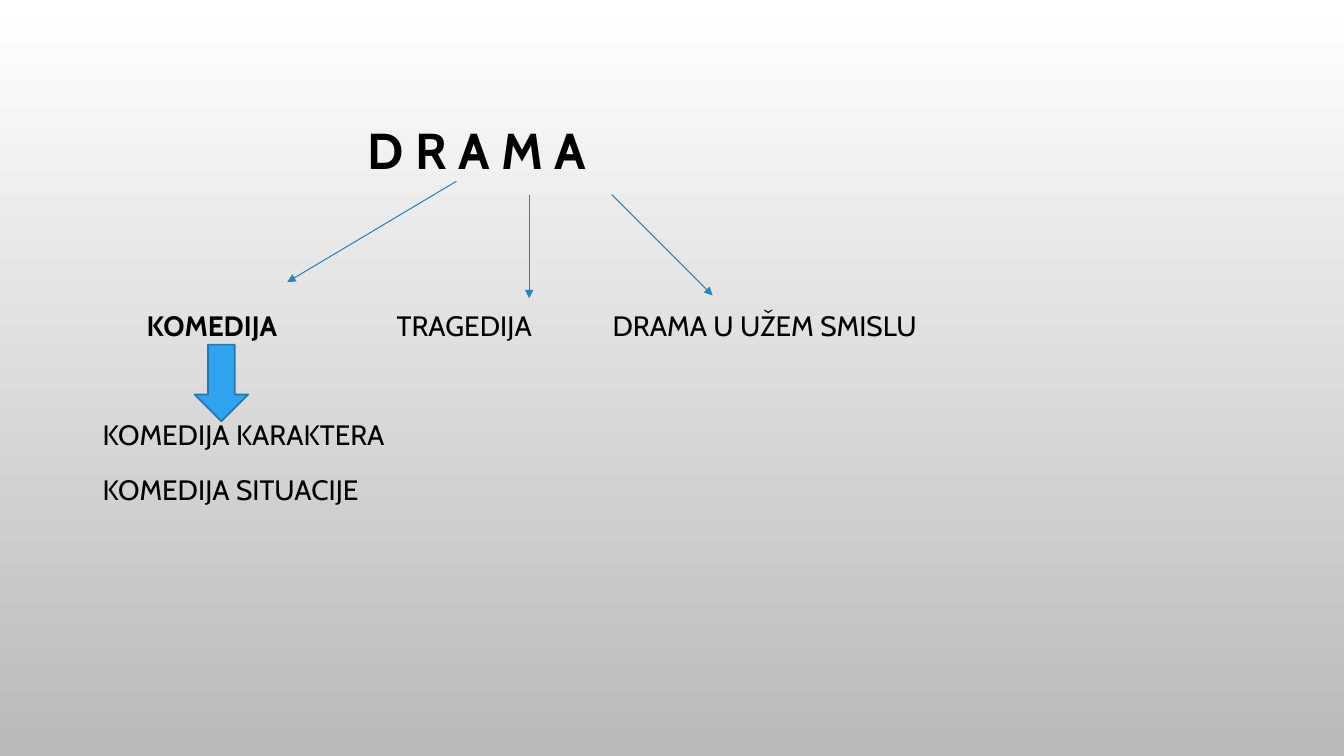
"""Builds a slide that divides drama into its kinds."""
from lxml import etree
from pptx import Presentation
from pptx.dml.color import RGBColor
from pptx.enum.shapes import MSO_CONNECTOR, MSO_SHAPE
from pptx.enum.text import MSO_ANCHOR, MSO_AUTO_SIZE, PP_ALIGN
from pptx.oxml.ns import qn
from pptx.util import Pt

LINE = MSO_CONNECTOR.STRAIGHT
DOWN = MSO_SHAPE.DOWN_ARROW
TOP = MSO_ANCHOR.TOP
FIXED = MSO_AUTO_SIZE.NONE
LEFT = PP_ALIGN.LEFT

FACE = "Cabin"
HEX = {"text": "000000", "line": "2683BF", "fill": "2FA3EE",
       "edge": "2379B0", "light": "FFFFFF", "dark": "B9B9B9"}

ROOT = "D R A M A"
KINDS = [("KOMEDIJA", 97.7, 120, True), ("TRAGEDIJA", 276.2, 120, False),
         ("DRAMA U UŽEM SMISLU", 430.5, 260, False)]
TYPES = ["KOMEDIJA KARAKTERA", "KOMEDIJA SITUACIJE"]

TITLE = (255.5, 81.8, 240, 52)
ROW, HIGH = 212, 36
BODY = (66.2, 290, 828, 172)
BLOCK = (139, 246.2, 38.2, 54.7)
RAYS = [((437, 139), (509, 211)), ((378, 139), (378, 213)),
        ((326, 129.5), (205.2, 201.5))]


def tint(name):
    return RGBColor.from_string(HEX[name])


def place(shape, box):
    shape.left, shape.top, shape.width, shape.height = map(Pt, box)
    frame = shape.text_frame
    frame.word_wrap = True
    frame.auto_size = FIXED
    frame.vertical_anchor = TOP
    return frame


def write(par, text, size=20, bold=False, space=0, lead=1.2):
    props = par._p.get_or_add_pPr()
    props.set("marL", "0")
    props.set("indent", "0")
    etree.SubElement(props, qn("a:buNone"))
    par.alignment = LEFT
    par.line_spacing = lead
    par.space_before = Pt(space)
    run = par.add_run()
    run.text = text
    font = run.font
    font.name, font.size, font.bold = FACE, Pt(size), bold
    font.color.rgb = tint("text")


def ray(slide, start, end):
    link = slide.shapes.add_connector(LINE, *map(Pt, start + end))
    link.line.color.rgb = tint("line")
    link.line.width = Pt(0.75)
    etree.SubElement(link.line._get_or_add_ln(), qn("a:tailEnd"), type="triangle")
    etree.SubElement(link._element.spPr, qn("a:effectLst"))


def main():
    deck = Presentation()
    deck.slide_width, deck.slide_height = Pt(960), Pt(540)
    slide = deck.slides.add_slide(deck.slide_layouts[1])

    back = slide.background.fill
    back.gradient()
    back.gradient_angle = 270
    for stop, name, pos in zip(back.gradient_stops, ("light", "dark"), (0, 1)):
        stop.color.rgb = tint(name)
        stop.position = pos

    title = place(slide.shapes.title, TITLE)
    write(title.paragraphs[0], ROOT, size=36, bold=True, lead=1)

    for text, left, wide, bold in KINDS:
        box = (left, ROW, wide, HIGH)
        label = place(slide.shapes.add_textbox(*map(Pt, box)), box)
        write(label.paragraphs[0], text, bold=bold)

    body = place(slide.placeholders[1], BODY)
    write(body.paragraphs[0], TYPES[0])
    for text in TYPES[1:]:
        write(body.add_paragraph(), text, space=10)

    for start, end in RAYS:
        ray(slide, start, end)

    block = slide.shapes.add_shape(DOWN, *map(Pt, BLOCK))
    block.shadow.inherit = False
    block.fill.solid()
    block.fill.fore_color.rgb = tint("fill")
    block.line.color.rgb = tint("edge")
    block.line.width = Pt(1.25)

    deck.save("out.pptx")


if __name__ == "__main__":
    main()
